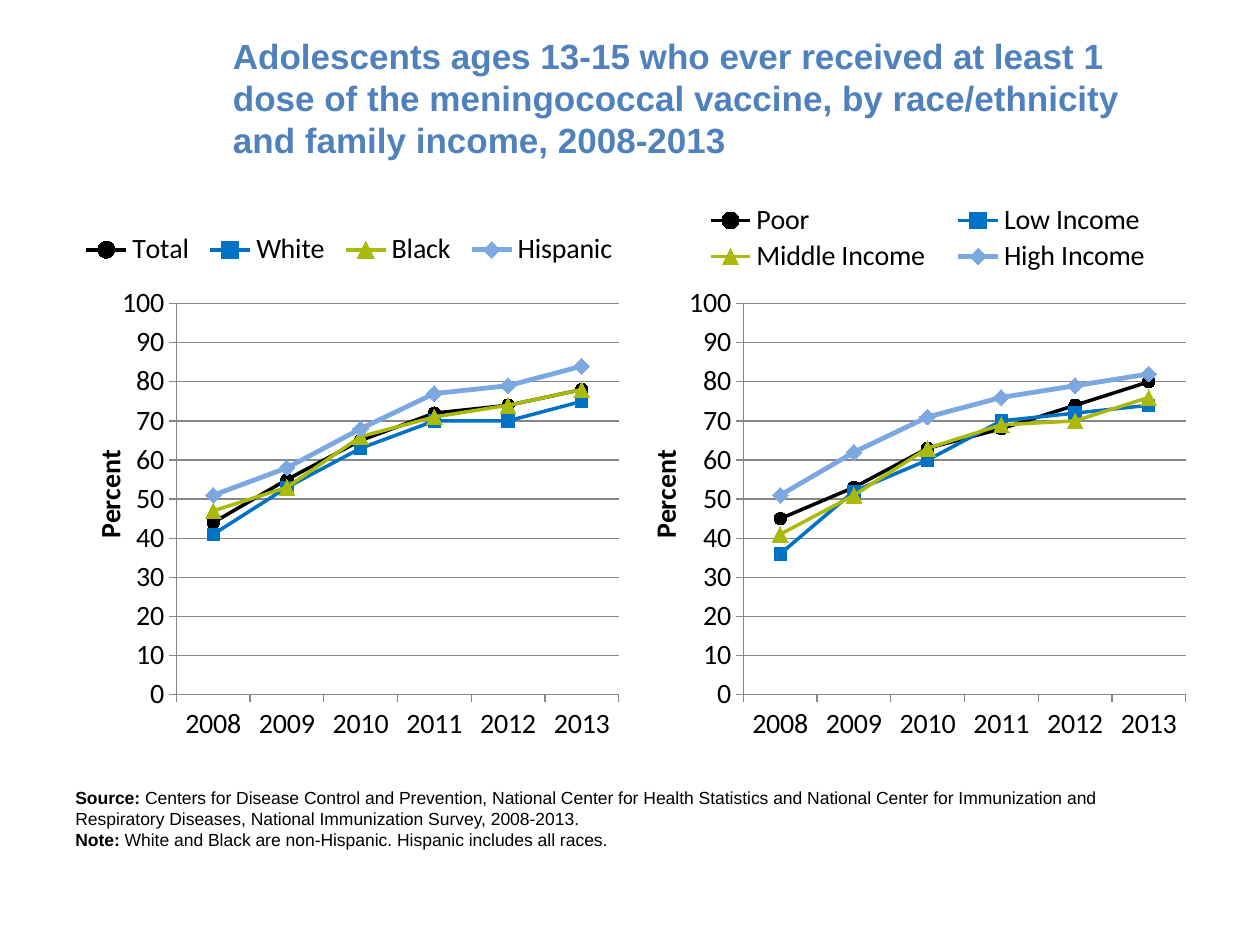
from lxml import etree
from pptx import Presentation
from pptx.chart.data import CategoryChartData
from pptx.dml.color import RGBColor
from pptx.enum.chart import XL_CHART_TYPE, XL_LEGEND_POSITION, XL_MARKER_STYLE, XL_TICK_MARK
from pptx.enum.text import MSO_ANCHOR
from pptx.oxml.ns import qn
from pptx.util import Inches, Pt


def rgb(value):
    return RGBColor.from_string(value)


def set_layout(parent, index, **values):
    old = parent.find(qn("c:layout"))
    if old is not None:
        parent.remove(old)
    layout = etree.Element(qn("c:layout"))
    parent.insert(index, layout)
    manual = etree.SubElement(layout, qn("c:manualLayout"))
    for key, value in values.items():
        etree.SubElement(manual, qn(f"c:{key}")).set("val", str(value))


prs = Presentation()
prs.slide_width, prs.slide_height = Inches(10), Inches(7.5)
s = prs.slides.add_slide(prs.slide_layouts[6])

texts = [
    ((1.75, 0.3, 7.75, 0.95), MSO_ANCHOR.MIDDLE, 20, "4F81BD", [
        [("Adolescents ages 13-15 who ever received at least 1 dose of the meningococcal "
          "vaccine, by race/ethnicity and family income, 2008-2013", True)],
    ]),
    ((0.5, 6.2, 9, 0.67), MSO_ANCHOR.TOP, 10, "000000", [
        [("Source: ", True),
         ("Centers for Disease Control and Prevention, National Center for Health Statistics "
          "and National Center for Immunization and Respiratory Diseases, National "
          "Immunization Survey, 2008-2013.", False)],
        [("Note: ", True),
         ("White and Black are non-Hispanic. Hispanic includes all races.", False)],
    ]),
]
for box, anchor, size, color, paragraphs in texts:
    tf = s.shapes.add_textbox(*map(Inches, box)).text_frame
    tf.word_wrap = True
    tf.vertical_anchor = anchor
    for i, runs in enumerate(paragraphs):
        p = tf.add_paragraph() if i else tf.paragraphs[0]
        for text, bold in runs:
            r = p.add_run()
            r.text = text
            for key, value in dict(name="Arial", size=Pt(size), bold=bold).items():
                setattr(r.font, key, value)
            r.font.color.rgb = rgb(color)

styles = [
    ("000000", 2, XL_MARKER_STYLE.CIRCLE, 7),
    ("0072C6", 2, XL_MARKER_STYLE.SQUARE, 7),
    ("AABA0A", 2, XL_MARKER_STYLE.TRIANGLE, 9),
    ("7BA8DF", 2.75, XL_MARKER_STYLE.DIAMOND, 9),
]
charts = [
    (5, dict(x=0.2, y=0.18, w=0.78, h=0.69), dict(x=0.1, y=0, w=0.85, h=0.13),
     dict(x=0.02, y=0.43), {
        "Poor": (45, 53, 63, 68, 74, 80),
        "Low Income": (36, 52, 60, 70, 72, 74),
        "Middle Income": (41, 51, 63, 69, 70, 76),
        "High Income": (51, 62, 71, 76, 79, 82),
    }),
    (0.5, dict(x=0.2, y=0.18, w=0.78, h=0.69), dict(x=0.02, y=0.05, w=0.97, h=0.07),
     dict(x=0.04, y=0.43), {
        "Total": (44, 55, 65, 72, 74, 78),
        "White": (41, 53, 63, 70, 70, 75),
        "Black": (47, 53, 66, 71, 74, 78),
        "Hispanic": (51, 58, 68, 77, 79, 84),
    }),
]
for left, plot_box, legend_box, title_at, series in charts:
    data = CategoryChartData(number_format="0")
    data.categories = [str(year) for year in range(2008, 2014)]
    for name, values in series.items():
        data.add_series(name, values)
    chart = s.shapes.add_chart(XL_CHART_TYPE.LINE_MARKERS, Inches(left), Inches(1.6),
                               Inches(4.5), Inches(4.5), data).chart
    chart.has_title = False
    chart.font.name, chart.font.size = "Calibri", Pt(16)
    chart.font.color.rgb = rgb("000000")

    chart.has_legend = True
    chart.legend.position = XL_LEGEND_POSITION.TOP
    chart.legend.include_in_layout = False
    chart.legend.font.name, chart.legend.font.size = "Calibri", Pt(16)

    va, ca = chart.value_axis, chart.category_axis
    for key, value in dict(minimum_scale=0, maximum_scale=100, major_unit=10,
                           has_major_gridlines=True, has_title=True).items():
        setattr(va, key, value)
    va.tick_labels.number_format = "0"
    va.tick_labels.number_format_is_linked = False
    for axis in (va, ca):
        axis.major_tick_mark = XL_TICK_MARK.OUTSIDE
        axis.minor_tick_mark = XL_TICK_MARK.NONE
        axis.tick_labels.font.name, axis.tick_labels.font.size = "Calibri", Pt(16)
    for line in (va.format.line, ca.format.line, va.major_gridlines.format.line):
        line.color.rgb = rgb("868686")
        line.width = Pt(0.75)

    tf = va.axis_title.text_frame
    tf.text = "Percent"
    for key, value in dict(name="Calibri", size=Pt(16), bold=True).items():
        setattr(tf.paragraphs[0].runs[0].font, key, value)
    body = va.axis_title._element.find(".//" + qn("a:bodyPr"))
    body.set("rot", "-5400000")
    body.set("vert", "horz")

    edges = dict(xMode="edge", yMode="edge")
    set_layout(chart._chartSpace.find(".//" + qn("c:plotArea")), 0,
               layoutTarget="inner", **edges, **plot_box)
    set_layout(chart.legend._element, 1, **edges, **legend_box)
    set_layout(va.axis_title._element, 1, **edges, **title_at)

    plot = chart.plots[0]
    plot.vary_by_categories = False
    for ser, (color, width, marker, size) in zip(plot.series, styles):
        ser.smooth = False
        ser.format.line.color.rgb = rgb(color)
        ser.format.line.width = Pt(width)
        ser.marker.style, ser.marker.size = marker, size
        ser.marker.format.fill.solid()
        ser.marker.format.fill.fore_color.rgb = rgb(color)
        ser.marker.format.line.color.rgb = rgb(color)

prs.save("out.pptx")
